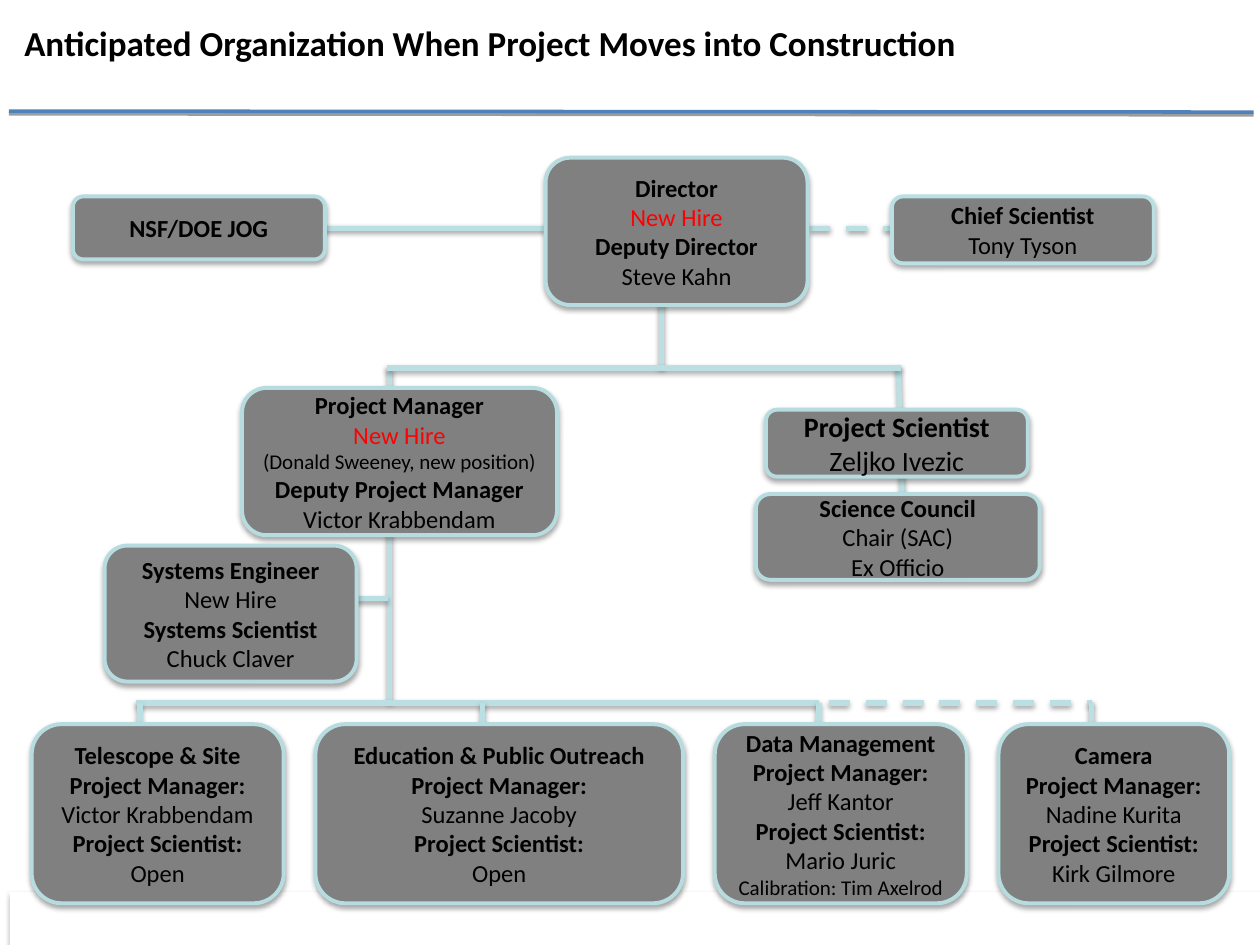
from lxml import etree
from pptx import Presentation, util as u
from pptx.dml import color
from pptx.enum import dml, shapes, text
from pptx.oxml import ns

COLORS = {"black": "000000", "red": "FF0000", "white": "FFFFFF", "box": "808080",
          "edge": "B6DCDF", "link": "BBE0E3", "rule": "4F81BD"}
STYLES = {
    "head": {"bold": True, "size": u.Pt(14)},
    "name": {"bold": False, "size": u.Pt(14)},
    "hire": {"bold": False, "size": u.Pt(14), "color": "red"},
    "note": {"bold": False, "size": u.Pt(12)},
    "big_head": {"bold": True, "size": u.Pt(16)},
    "big_name": {"bold": False, "size": u.Pt(16)},
    "title": {"bold": True, "size": u.Pt(20)},
}
TITLE_FRAME = {"margin_left": u.Cm(0.13), "margin_top": u.Cm(0.05), "margin_right": u.Cm(0.13),
               "margin_bottom": u.Cm(0.13), "word_wrap": True}
BOX_FRAME = {"vertical_anchor": text.MSO_ANCHOR.MIDDLE, "word_wrap": True}


def rgb(name):
    return color.RGBColor.from_string(COLORS[name])


def apply(obj, values):
    for key, value in values.items():
        setattr(obj, key, value)


def add_shadow(sp, tone="black", alpha=35, blur=3.1, dist=1.8):
    effects = etree.SubElement(sp._element.spPr, ns.qn("a:effectLst"))
    shadow = etree.SubElement(effects, ns.qn("a:outerShdw"), blurRad=str(u.Pt(blur)),
                              dist=str(u.Pt(dist)), dir="5400000", rotWithShape="0")
    tint = etree.SubElement(shadow, ns.qn("a:srgbClr"), val=COLORS[tone])
    etree.SubElement(tint, ns.qn("a:alpha"), val=str(alpha * 1000))


def write(sp, frame, lines, align):
    tf = sp.text_frame
    apply(tf, frame)
    for i, (words, style) in enumerate(lines):
        p = tf.add_paragraph() if i else tf.paragraphs[0]
        p.alignment = align
        r = p.add_run()
        r.text = words
        fmt = dict(STYLES[style])
        r.font.color.rgb = rgb(fmt.pop("color", "black"))
        apply(r.font, {"name": "Calibri", **fmt})


def add_line(s, origin, ends, tone="link", width=3, dashed=False, **shadow):
    points = [u.Cm(v + origin[i % 2]) for i, v in enumerate(ends)]
    sp = s.shapes.add_connector(shapes.MSO_CONNECTOR.STRAIGHT, *points)
    sp.line.color.rgb = rgb(tone)
    sp.line.width = u.Pt(width)
    if dashed:
        sp.line.dash_style = dml.MSO_LINE.DASH
    add_shadow(sp, **{"alpha": 38, "dist": 1.6, **shadow})


def add_box(s, origin, place, lines, edge="edge"):
    x, y, w, h = place
    sp = s.shapes.add_shape(shapes.MSO_SHAPE.ROUNDED_RECTANGLE, u.Cm(origin[0] + x),
                            u.Cm(origin[1] + y), u.Cm(w), u.Cm(h))
    sp.fill.solid()
    sp.fill.fore_color.rgb = rgb("box")
    sp.line.color.rgb = rgb(edge)
    sp.line.width = u.Pt(2.25)
    add_shadow(sp)
    write(sp, BOX_FRAME, lines, text.PP_ALIGN.CENTER)


def header(s, x, y, w, h):
    add_line(s, (x, y), (w, h, 0.18, h - 0.02), tone="rule", width=2, blur=0)
    sp = s.shapes.add_textbox(u.Cm(x + 0.36), u.Cm(y + 0.38), u.Cm(19.38), u.Cm(1.55))
    write(sp, TITLE_FRAME, [("Anticipated Organization When Project Moves into Construction",
                             "title")], text.PP_ALIGN.LEFT)


def footer(s, x, y, w, h):
    sp = s.shapes.add_shape(shapes.MSO_SHAPE.RECTANGLE, u.Cm(x), u.Cm(y), u.Cm(w), u.Cm(h))
    sp.fill.solid()
    sp.fill.fore_color.rgb = rgb("white")
    sp.line.fill.background()
    add_shadow(sp)


def leadership(s, x, y):
    box = (x, y)
    row = 1.42
    add_line(s, box, (4.68, row, 9.96, row))
    add_line(s, box, (11.87, 1.7, 11.87, 4.24))
    add_line(s, box, (10.39, row, 17.58, row), dashed=True)
    add_box(s, box, (9.53, 0, 5.28, 2.97),
            [("Director", "head"), ("New Hire", "hire"),
             ("Deputy Director", "head"), ("Steve Kahn", "name")])
    add_box(s, box, (0, 0.78, 5.08, 1.27), [("NSF/DOE JOG", "head")])
    add_box(s, box, (16.51, 0.78, 5.28, 1.35),
            [("Chief Scientist", "head"), ("Tony Tyson", "name")], edge="link")


def management(s, x, y):
    box = (x, y)
    for ends in [(16, -0.05, 16.1, 3.4), (5.74, 0, 5.74, 6.73),
                 (0.43, 4.65, 5.71, 4.65), (5.69, 0, 16.05, 0)]:
        add_line(s, box, ends)
    add_box(s, box, (2.77, 0.4, 6.35, 2.97),
            [("Project Manager", "head"), ("New Hire", "hire"),
             ("(Donald Sweeney, new position)", "note"),
             ("Deputy Project Manager", "head"), ("Victor Krabbendam", "name")])
    add_box(s, box, (0, 3.58, 5.08, 2.74),
            [("Systems Engineer", "head"), ("New Hire", "name"),
             ("Systems Scientist", "head"), ("Chuck Claver", "name")])
    add_box(s, box, (13.33, 0.84, 5.28, 1.35),
            [("Project Scientist", "big_head"), ("Zeljko Ivezic", "big_name")])
    add_box(s, box, (13.13, 2.54, 5.72, 1.73),
            [("Science Council", "head"), ("Chair (SAC)", "name"), ("Ex Officio", "name")])


def teams(s, x, y):
    box = (x, y)
    gap = 0.64
    rows = [
        ("Telescope & Site", "Victor Krabbendam", "Open", [], 5.08, 2.18),
        ("Education & Public Outreach", "Suzanne Jacoby", "Open", [], 7.41, 9.09),
        ("Data Management", "Jeff Kantor", "Mario Juric",
         [("Calibration: Tim Axelrod", "note")], 5.08, 15.87),
        ("Camera", "Nadine Kurita", "Kirk Gilmore", [], 4.65, 21.36),
    ]
    add_line(s, box, (2.1, 0, 15.87, 0))
    add_line(s, box, (16.07, 0, 21.38, 0), dashed=True)
    left = 0
    for team, manager, scientist, extra, width, drop in rows:
        add_line(s, box, (drop, 0, drop, 1.6))
        add_box(s, box, (left, 0.43, width, 3.61),
                [(team, "head"), ("Project Manager:", "head"), (manager, "name"),
                 ("Project Scientist:", "head"), (scientist, "name")] + extra)
        left += width + gap


def main():
    prs = Presentation()
    prs.slide_width, prs.slide_height = u.Cm(25.4), u.Cm(19.05)
    s = prs.slides.add_slide(prs.slide_layouts[6])
    header(s, 0, 0, 25.27, 2.26)
    footer(s, 0.2, 17.98, 25.6, 1.07)
    leadership(s, 1.47, 3.18)
    management(s, 2.11, 7.42)
    teams(s, 0.64, 14.17)
    prs.save("out.pptx")


if __name__ == "__main__":
    main()
